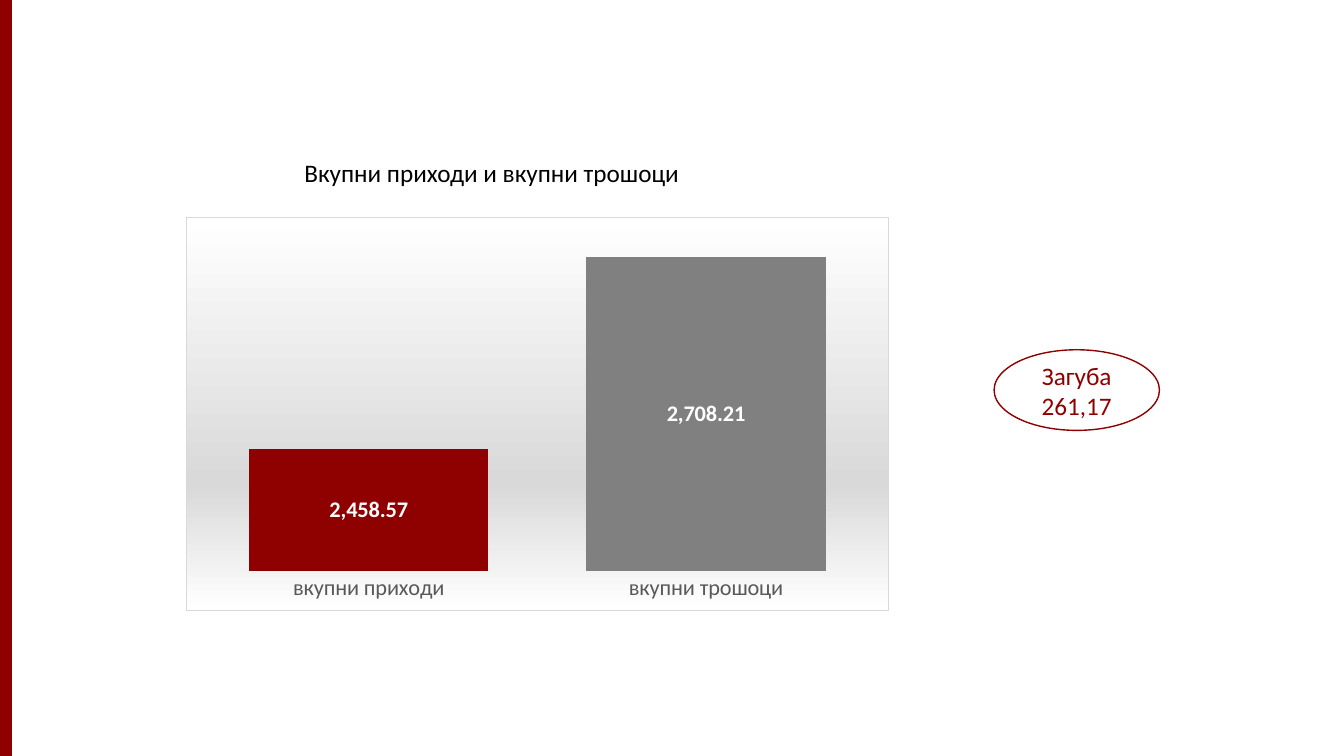
import lxml.etree
import pptx
import pptx.chart.data
import pptx.dml.color
import pptx.enum.chart
import pptx.enum.shapes
import pptx.enum.text
import pptx.oxml
import pptx.oxml.ns
import pptx.util

RGBColor = pptx.dml.color.RGBColor
Inches, Pt = pptx.util.Inches, pptx.util.Pt
SHAPE = pptx.enum.shapes.MSO_SHAPE
qn = pptx.oxml.ns.qn

FONT = "Calibri"
RED = RGBColor(0x8F, 0x00, 0x00)
GREY = RGBColor(0x80, 0x80, 0x80)
LABEL_GREY = RGBColor(0x59, 0x59, 0x59)
PALE_GREY = RGBColor(0xD9, 0xD9, 0xD9)
WHITE = RGBColor(0xFF, 0xFF, 0xFF)
BLACK = RGBColor(0x00, 0x00, 0x00)

TITLE = "Вкупни приходи и вкупни трошоци"
LOSS = "Загуба 261,17"
TOTALS = [("вкупни приходи", 2458.57, RED), ("вкупни трошоци", 2708.21, GREY)]
AXIS_RANGE = (2300, 2750)
BACKDROP = [(0, WHITE), (68, PALE_GREY), (100, WHITE)]
PLOT = {"x": 0.02, "y": 0.02, "w": 0.96, "h": 0.88}  # shares of the chart

WIDTH, HEIGHT = 13.33, 7.5
BAND_BOX = (0, 0, 0.11, HEIGHT)
CHART_BOX = (1.84, 2.15, 6.98, 3.91)
TITLE_BOX = (2.92, 1.51, 4.82, 0.4)
LOSS_BOX = (9.86, 3.47, 1.64, 0.8)


def inches(box):
    return [Inches(v) for v in box]


def style_font(font, size, color, bold=False):
    font.name, font.size, font.bold = FONT, Pt(size), bold
    font.color.rgb = color


def write(sp, text, size=18, color=BLACK, align="LEFT", anchor="TOP"):
    tf = sp.text_frame
    tf.word_wrap = True
    tf.vertical_anchor = getattr(pptx.enum.text.MSO_ANCHOR, anchor)
    p = tf.paragraphs[0]
    p.alignment = getattr(pptx.enum.text.PP_ALIGN, align)
    r = p.add_run()
    r.text = text
    style_font(r.font, size, color)


def add_shape(s, kind, box, fill, line):
    sp = s.shapes.add_shape(kind, *inches(box))
    sp.shadow.inherit = False
    sp.fill.solid()
    sp.fill.fore_color.rgb = fill
    sp.line.color.rgb = line
    sp.line.width = Pt(1)
    return sp


def add_backdrop(chart):
    """Give the chart area a vertical gradient and a thin border."""
    stops = "".join(
        f'<a:gs pos="{pos * 1000}"><a:srgbClr val="{color}"/></a:gs>'
        for pos, color in BACKDROP)
    sp_pr = pptx.oxml.parse_xml(
        f'<c:spPr {pptx.oxml.ns.nsdecls("c", "a")}>'
        f'<a:gradFill><a:gsLst>{stops}</a:gsLst><a:lin ang="5400000" scaled="0"/></a:gradFill>'
        f'<a:ln w="9525"><a:solidFill><a:srgbClr val="{PALE_GREY}"/></a:solidFill></a:ln>'
        '</c:spPr>')
    chart.element.find(qn("c:chart")).addnext(sp_pr)


def place_plot(chart):
    """Fix the inner plot area by shares of the chart."""
    area = chart.element.find(".//" + qn("c:plotArea"))
    layout = area.find(qn("c:layout"))
    if layout is None:
        layout = lxml.etree.Element(qn("c:layout"))
        area.insert(0, layout)
    manual = lxml.etree.SubElement(layout, qn("c:manualLayout"))
    settings = {"layoutTarget": "inner", "xMode": "edge", "yMode": "edge", **PLOT}
    for tag, val in settings.items():
        lxml.etree.SubElement(manual, qn(f"c:{tag}")).set("val", str(val))


def add_totals_chart(s):
    data = pptx.chart.data.CategoryChartData(number_format="#,##0.00")
    data.categories = [name for name, _, _ in TOTALS]
    data.add_series("Series 1", [value for _, value, _ in TOTALS])
    kind = pptx.enum.chart.XL_CHART_TYPE.COLUMN_CLUSTERED
    chart = s.shapes.add_chart(kind, *inches(CHART_BOX), data).chart
    style_font(chart.font, 10, BLACK)
    chart.has_title = chart.has_legend = False

    values = chart.value_axis
    values.minimum_scale, values.maximum_scale = AXIS_RANGE
    values.has_major_gridlines = values.visible = False
    cats = chart.category_axis
    cats.major_tick_mark = pptx.enum.chart.XL_TICK_MARK.NONE
    cats.format.line.fill.background()
    style_font(cats.tick_labels.font, 16, LABEL_GREY)

    plot = chart.plots[0]
    plot.gap_width = 41
    plot.vary_by_categories = False
    series = plot.series[0]
    for i, (_, _, color) in enumerate(TOTALS):
        fill = series.points[i].format.fill
        fill.solid()
        fill.fore_color.rgb = color
    labels = series.data_labels
    labels.show_value = True
    labels.number_format = "#,##0.00"
    labels.number_format_is_linked = False
    labels.position = pptx.enum.chart.XL_LABEL_POSITION.CENTER
    style_font(labels.font, 16, WHITE, bold=True)

    add_backdrop(chart)
    place_plot(chart)


def main():
    prs = pptx.Presentation()
    prs.slide_width, prs.slide_height = Inches(WIDTH), Inches(HEIGHT)
    s = prs.slides.add_slide(prs.slide_layouts[6])
    add_shape(s, SHAPE.RECTANGLE, BAND_BOX, RED, RED)
    add_totals_chart(s)
    write(s.shapes.add_textbox(*inches(TITLE_BOX)), TITLE)
    loss = add_shape(s, SHAPE.OVAL, LOSS_BOX, WHITE, RED)
    write(loss, LOSS, color=RED, align="CENTER", anchor="MIDDLE")
    prs.save("out.pptx")


if __name__ == "__main__":
    main()
